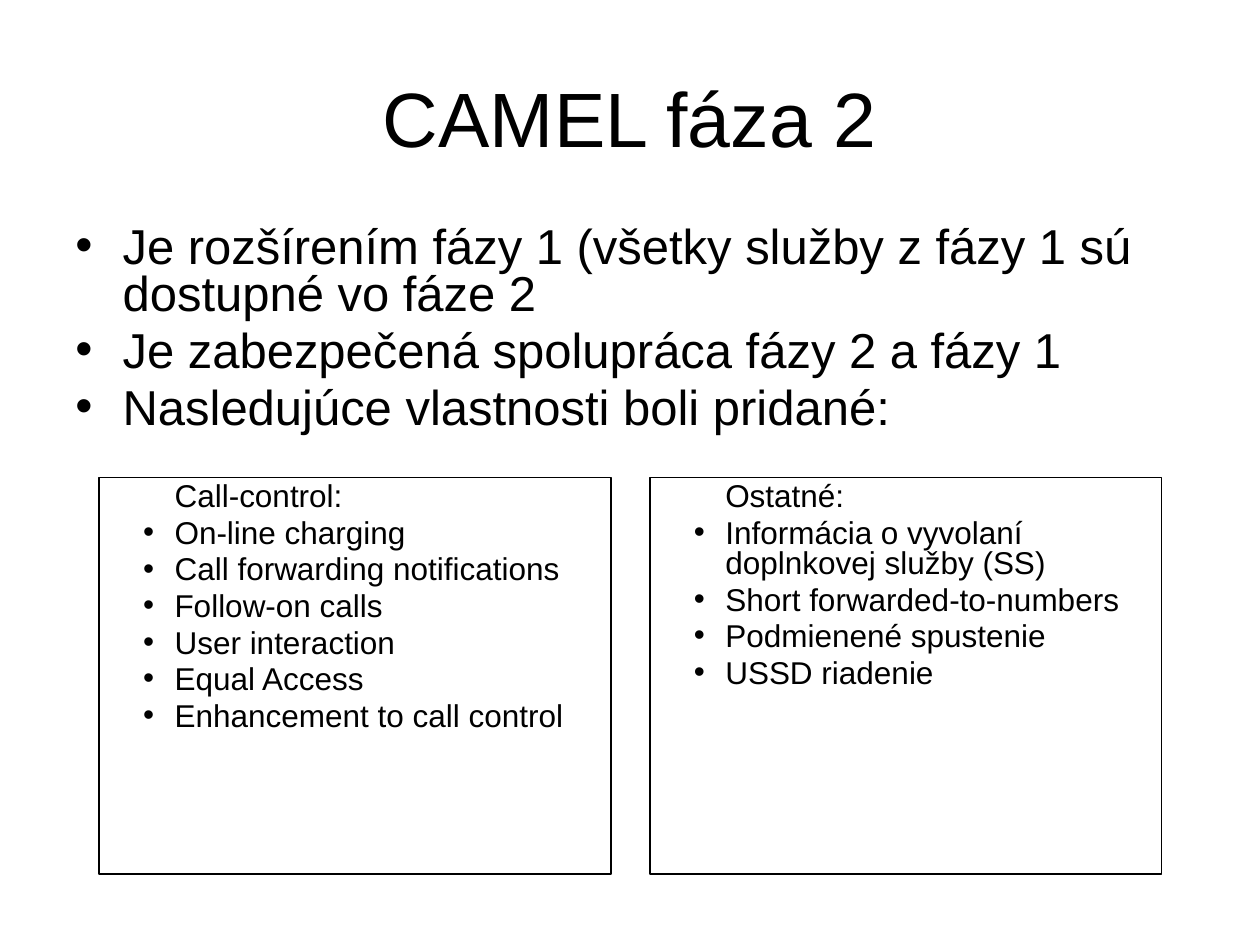
from lxml.etree import SubElement
from pptx import Presentation
from pptx.dml.color import RGBColor
from pptx.enum.shapes import MSO_SHAPE as Shape
from pptx.enum.text import MSO_ANCHOR as Anchor, MSO_AUTO_SIZE as AutoSize, PP_ALIGN as Align
from pptx.oxml.ns import qn
from pptx.util import Pt

COLORS = {"ink": "000000", "paper": "FFFFFF"}
FONT = "Arial"

POINTS = [
    "Je rozšírením fázy 1 (všetky služby z fázy 1 sú dostupné vo fáze 2",
    "Je zabezpečená spolupráca fázy 2 a fázy 1",
    "Nasledujúce vlastnosti boli pridané:",
]
FEATURES = [
    ("Call-control:", [
        "On-line charging",
        "Call forwarding notifications",
        "Follow-on calls",
        "User interaction",
        "Equal Access",
        "Enhancement to call control",
    ]),
    ("Ostatné:", [
        "Informácia o vyvolaní doplnkovej služby (SS)",
        "Short forwarded-to-numbers",
        "Podmienené spustenie",
        "USSD riadenie",
    ]),
]


def color(name):
    return RGBColor.from_string(COLORS[name])


def add_text(paragraph, text, size):
    run = paragraph.add_run()
    run.text = text
    run.font.name = FONT
    run.font.size = Pt(size)
    run.font.color.rgb = color("ink")


def indent(paragraph, margin, hanging, bullet):
    props = paragraph._p.get_or_add_pPr()
    props.set("marL", str(Pt(margin)))
    props.set("indent", str(-Pt(hanging)))
    if bullet:
        SubElement(props, qn("a:buFont"), typeface=FONT)
        SubElement(props, qn("a:buChar"), char="•")
    else:
        SubElement(props, qn("a:buNone"))


def fill_list(frame, items, size, margin, hanging, heading=None):
    frame.word_wrap = True
    frame.vertical_anchor = Anchor.TOP
    lines = ([heading] if heading else []) + items
    for number, line in enumerate(lines):
        paragraph = frame.paragraphs[0] if number == 0 else frame.add_paragraph()
        paragraph.alignment = Align.LEFT
        paragraph.line_spacing = 0.8
        paragraph.space_before = Pt(size * 0.2)
        is_heading = line == heading
        indent(paragraph, margin, 0 if is_heading else hanging, not is_heading)
        add_text(paragraph, line, size)


def place_title(slide, left, top, width, height):
    title = slide.shapes.title
    title.left, title.top, title.width, title.height = map(Pt, (left, top, width, height))
    frame = title.text_frame
    frame.auto_size = AutoSize.NONE
    frame.vertical_anchor = Anchor.MIDDLE
    frame.paragraphs[0].alignment = Align.CENTER
    add_text(frame.paragraphs[0], "CAMEL fáza 2", 44)


def add_points(slide, left, top, width, height):
    points = slide.shapes.add_textbox(Pt(left), Pt(top), Pt(width), Pt(height))
    fill_list(points.text_frame, POINTS, 28, 27, 27)


def add_feature_box(slide, left, top, width, height, heading, items):
    box = slide.shapes.add_shape(Shape.RECTANGLE, Pt(left), Pt(top), Pt(width), Pt(height))
    box.shadow.inherit = False
    box.fill.background()
    box.line.color.rgb = color("ink")
    box.line.width = Pt(1)
    fill_list(box.text_frame, items, 18, 36, 18, heading)


def add_features(slide, left, top, width, height, gap):
    box_width = (width - gap * (len(FEATURES) - 1)) / len(FEATURES)
    for column, (heading, items) in enumerate(FEATURES):
        box_left = left + column * (box_width + gap)
        add_feature_box(slide, box_left, top, box_width, height, heading, items)


def main():
    deck = Presentation()
    deck.slide_width, deck.slide_height = Pt(720), Pt(540)
    slide = deck.slides.add_slide(deck.slide_layouts.get_by_name("Title Only"))
    slide.background.fill.solid()
    slide.background.fill.fore_color.rgb = color("paper")
    place_title(slide, 36, 21.6, 648, 90)
    add_points(slide, 36, 126, 648, 135)
    add_features(slide, 56.7, 272.8, 607, 226.8, 22.4)
    deck.save("out.pptx")


if __name__ == "__main__":
    main()
